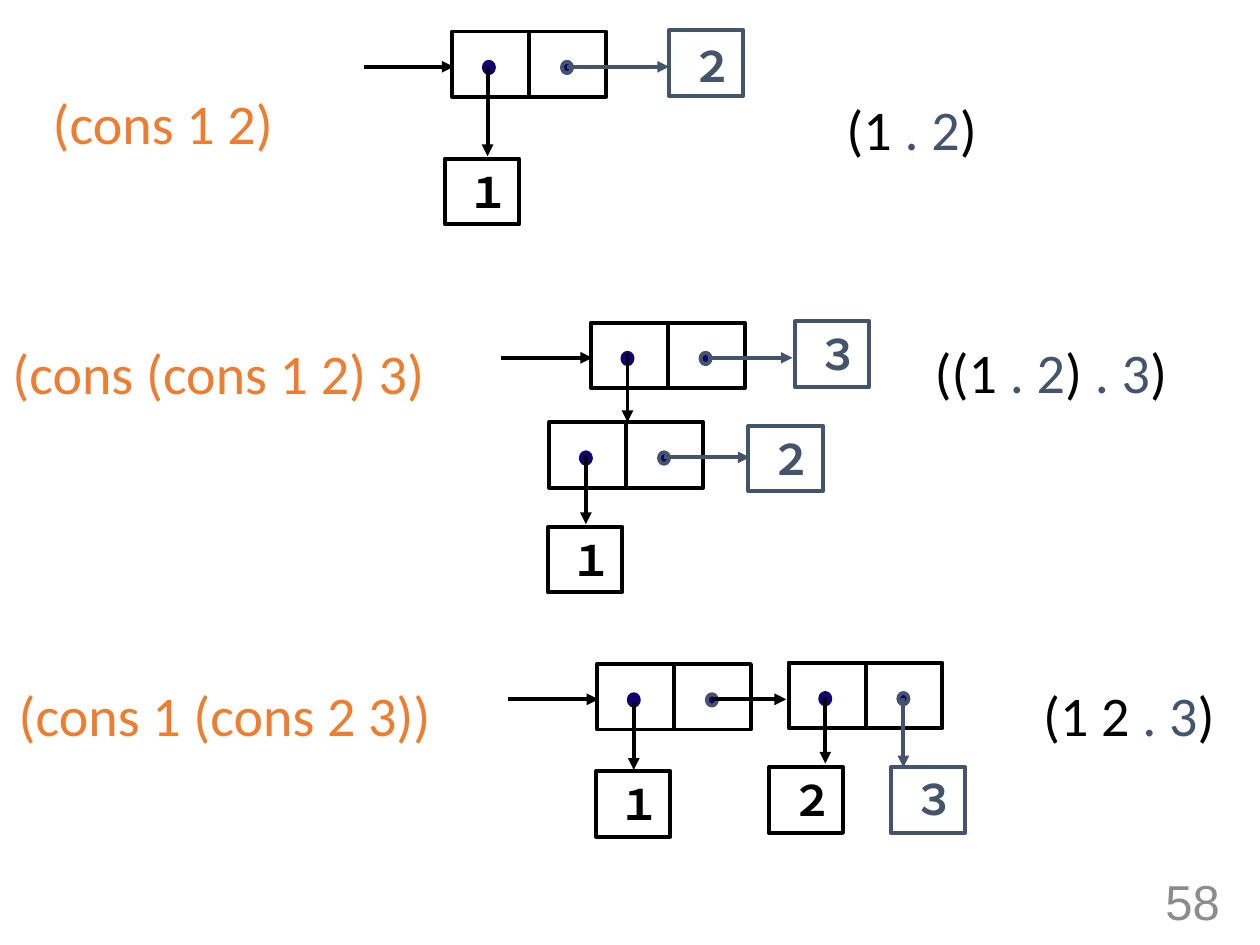
from lxml.etree import SubElement
from pptx import Presentation
from pptx.dml.color import RGBColor
from pptx.enum.shapes import MSO_CONNECTOR, MSO_SHAPE
from pptx.enum.text import MSO_ANCHOR, MSO_AUTO_SIZE, PP_ALIGN
from pptx.oxml.ns import qn
from pptx.util import Inches, Pt

BLACK, SLATE, NAVY = "000000", "44546A", "100070"
ORANGE, GRAY = "ED7D31", "8C8C8C"
PAIR_WIDTH, CELL_HEIGHT, VALUE_WIDTH = 1.22, 0.52, 0.59


def color(hex_text):
    return RGBColor.from_string(hex_text)


def add_outline(page, kind, left, top, width, height, line, fill=None):
    shape = page.shapes.add_shape(
        kind, Inches(left), Inches(top), Inches(width), Inches(height))
    shape.shadow.inherit = False
    if fill:
        shape.fill.solid()
        shape.fill.fore_color.rgb = color(fill)
    else:
        shape.fill.background()
    shape.line.color.rgb = color(line)
    shape.line.width = Pt(2.25)


def add_line(page, start, end, line=BLACK, arrow=True):
    connector = page.shapes.add_connector(
        MSO_CONNECTOR.STRAIGHT, *(Inches(value) for value in (*start, *end)))
    connector.line.color.rgb = color(line)
    connector.line.width = Pt(2.25)
    if arrow:
        SubElement(connector.line._get_or_add_ln(), qn("a:tailEnd"), type="triangle")
    SubElement(connector._element.spPr, qn("a:effectLst"))


def add_text(page, left, top, width, height, spans, size,
             font="Calibri", bold=False, wrap=True):
    """Write one paragraph from (text, colour) spans."""
    box = page.shapes.add_textbox(
        Inches(left), Inches(top), Inches(width), Inches(height))
    frame = box.text_frame
    frame.word_wrap = wrap
    frame.auto_size = MSO_AUTO_SIZE.SHAPE_TO_FIT_TEXT
    para = frame.paragraphs[0]
    para.font.name = font
    para.font.size = Pt(size)
    para.font.bold = bold
    for text, text_color in spans:
        span = para.add_run()
        span.text = text
        span.font.color.rgb = color(text_color)
    return box


def add_pair(page, left, top):
    """Draw a cons cell: two halves, each with a pointer dot."""
    add_outline(page, MSO_SHAPE.RECTANGLE, left, top, PAIR_WIDTH, CELL_HEIGHT, BLACK)
    middle = left + PAIR_WIDTH / 2
    add_line(page, (middle, top), (middle, top + CELL_HEIGHT), arrow=False)
    for offset, line in ((0.25, NAVY), (0.87, SLATE)):
        add_outline(page, MSO_SHAPE.OVAL, left + offset, top + 0.24, 0.08, 0.09,
                    line, NAVY)


def add_value(page, left, top, digit, ink=BLACK, text_shift=0.01):
    """Draw a boxed number."""
    add_outline(page, MSO_SHAPE.RECTANGLE, left, top, VALUE_WIDTH, CELL_HEIGHT, ink)
    add_text(page, left + 0.08, top + text_shift, 0.57, 0.5, [(digit, ink)], 24,
             bold=True)


def add_expression(page, left, top, width, *spans):
    add_text(page, left, top, width, 0.63, spans, 32, wrap=False)


def add_dotted_pair(page):
    add_expression(page, 0.32, 0.65, 1.98, ("(cons 1 2)", ORANGE))
    add_expression(page, 6.62, 0.7, 1.27,
                   ("(1 ", BLACK), (". 2", SLATE), (")", BLACK))
    add_pair(page, 3.59, 0.25)
    add_line(page, (2.89, 0.53), (3.6, 0.53))
    add_line(page, (3.87, 0.53), (3.87, 1.24))
    add_line(page, (4.5, 0.53), (5.31, 0.53), SLATE)
    add_value(page, 3.53, 1.26, "１")
    add_value(page, 5.31, 0.24, "２", SLATE, text_shift=0.03)


def add_pair_in_head(page):
    add_expression(page, 0, 2.64, 3.53, ("(cons (cons 1 2) 3)", ORANGE))
    add_expression(page, 7.32, 2.63, 2.12, ("((1 ", BLACK), (". 2", SLATE),
                   (") ", BLACK), (". 3", SLATE), (")", BLACK))
    # Inner pair
    add_pair(page, 4.36, 3.35)
    add_line(page, (4.65, 3.62), (4.65, 4.16))
    add_line(page, (5.27, 3.63), (5.95, 3.63), SLATE)
    add_value(page, 4.35, 4.18, "１")
    add_value(page, 5.94, 3.38, "２", SLATE)
    # Outer pair
    add_pair(page, 4.69, 2.56)
    add_line(page, (3.98, 2.84), (4.7, 2.84))
    add_line(page, (4.98, 2.81), (4.98, 3.35))
    add_line(page, (5.62, 2.84), (6.29, 2.84), SLATE)
    add_value(page, 6.31, 2.55, "３", SLATE)


def add_pair_in_tail(page):
    add_expression(page, 0.05, 5.35, 3.53, ("(cons 1 (cons 2 3))", ORANGE))
    add_expression(page, 8.18, 5.35, 1.61,
                   ("(1 2 ", BLACK), (". 3", SLATE), (")", BLACK))
    # Outer pair
    add_pair(page, 4.74, 5.27)
    add_line(page, (4.03, 5.55), (4.75, 5.55))
    add_line(page, (5.03, 5.57), (5.03, 6.11))
    add_line(page, (5.65, 5.55), (6.24, 5.55))
    add_value(page, 4.73, 6.12, "１")
    # Inner pair
    add_pair(page, 6.26, 5.26)
    add_line(page, (6.55, 5.53), (6.55, 6.06))
    add_line(page, (7.17, 5.54), (7.17, 6.09), SLATE)
    add_value(page, 6.1, 6.09, "２")
    add_value(page, 7.07, 6.09, "３", SLATE, text_shift=0)


def add_page_number(page):
    box = add_text(page, 7.53, 6.95, 2.25, 0.4, [("58", GRAY)], 28, font="Arial")
    box.text_frame.auto_size = MSO_AUTO_SIZE.NONE
    box.text_frame.vertical_anchor = MSO_ANCHOR.MIDDLE
    box.text_frame.paragraphs[0].alignment = PP_ALIGN.RIGHT


def main():
    deck = Presentation()
    deck.slide_width, deck.slide_height = Inches(10), Inches(7.5)
    page = deck.slides.add_slide(deck.slide_layouts[6])
    add_dotted_pair(page)
    add_pair_in_head(page)
    add_pair_in_tail(page)
    add_page_number(page)
    deck.save("out.pptx")


if __name__ == "__main__":
    main()
